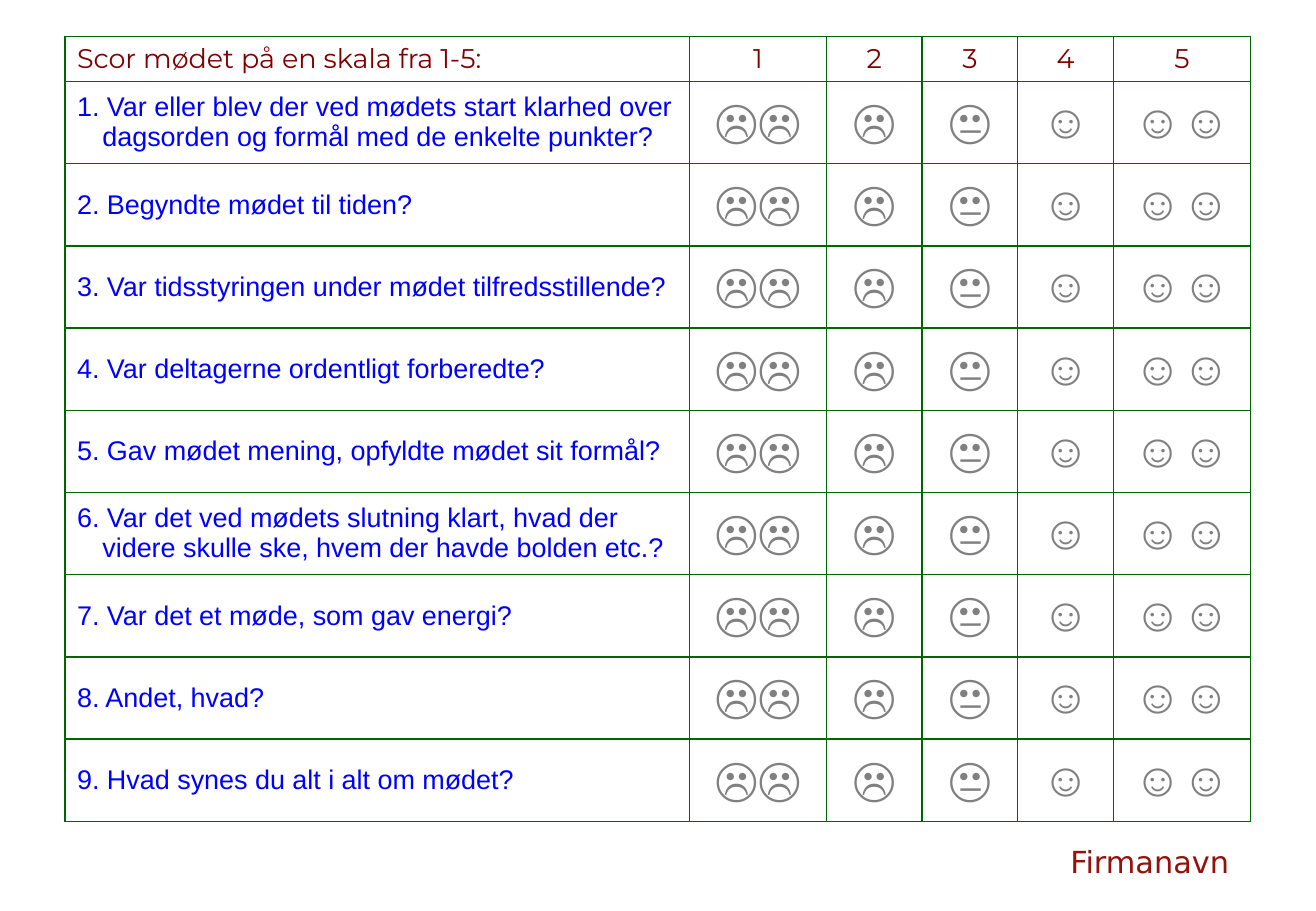
from lxml import etree
from pptx import Presentation
from pptx.dml.color import RGBColor
from pptx.enum.text import MSO_ANCHOR, PP_ALIGN
from pptx.oxml.ns import qn
from pptx.util import Pt

LEFT, MID = PP_ALIGN.LEFT, PP_ALIGN.CENTER
TOP, CENTRE = MSO_ANCHOR.TOP, MSO_ANCHOR.MIDDLE
HUES = {"head": "800000", "ask": "0000FF", "face": "808080",
        "line": "006600", "name": "93130C"}
WIDTHS = [370.2, 81.2, 56.7, 56.7, 56.7, 81.2]
HEAD = ["Scor mødet på en skala fra 1-5:", "1", "2", "3", "4", "5"]
FACES = ["☹☹", "☹", "😐", "☺", "☺☺"]
ASKS = [
    "Var eller blev der ved mødets start klarhed over dagsorden og formål med de enkelte punkter?",
    "Begyndte mødet til tiden?",
    "Var tidsstyringen under mødet tilfredsstillende?",
    "Var deltagerne ordentligt forberedte?",
    "Gav mødet mening, opfyldte mødet sit formål?",
    "Var det ved mødets slutning klart, hvad der videre skulle ske, hvem der havde bolden etc.?",
    "Var det et møde, som gav energi?",
    "Andet, hvad?",
    "Hvad synes du alt i alt om mødet?",
]


def write(frame, text, font="Arial", size=16, hue="ask", align=LEFT, hang=0):
    """Put one formatted paragraph in a text frame."""
    para = frame.paragraphs[0]
    para.alignment = align
    if hang:
        props = para._p.get_or_add_pPr()
        props.set("marL", str(Pt(hang)))
        props.set("indent", str(-Pt(hang)))
    run = para.add_run()
    run.text = text
    run.font.name = font
    run.font.size = Pt(size)
    run.font.color.rgb = RGBColor.from_string(HUES[hue])


def edge(cell):
    """Draw a thin line on all four sides of a cell."""
    props = cell._tc.get_or_add_tcPr()
    for at, side in enumerate(("lnL", "lnR", "lnT", "lnB")):
        line = etree.Element(qn("a:" + side), w=str(Pt(1)))
        fill = etree.SubElement(line, qn("a:solidFill"))
        etree.SubElement(fill, qn("a:srgbClr"), val=HUES["line"])
        props.insert(at, line)


def grid(slide, left, top, width, height, first=26.7):
    """Build the score table in its box."""
    rows = [HEAD] + [[f"{num}. {ask}"] + FACES for num, ask in enumerate(ASKS, 1)]
    table = slide.shapes.add_table(len(rows), len(HEAD), Pt(left), Pt(top),
                                   Pt(width), Pt(height)).table
    table.first_row = table.horz_banding = False
    for col, wide in zip(table.columns, WIDTHS):
        col.width = Pt(wide)
    for num, texts in enumerate(rows):
        table.rows[num].height = Pt((height - first) / len(ASKS) if num else first)
        for pos, text in enumerate(texts):
            cell = table.cell(num, pos)
            cell.fill.background()
            edge(cell)
            cell.vertical_anchor = CENTRE if num else TOP
            if num == 0:
                look = {"font": "Montserrat", "hue": "head"}
            elif pos:
                look = {"font": "Times New Roman", "size": 28, "hue": "face"}
            else:
                look = {}
            write(cell.text_frame, text, align=MID if pos else LEFT, hang=15, **look)


def sign(slide, left, top, width, height):
    """Place the sender's name in its box."""
    frame = slide.shapes.add_textbox(Pt(left), Pt(top), Pt(width), Pt(height)).text_frame
    frame.word_wrap = True
    frame.vertical_anchor = CENTRE
    write(frame, "Firmanavn", font="DejaVu Sans", size=18, hue="name", align=MID)


def main():
    """Build and save the slide."""
    deck = Presentation()
    deck.slide_width, deck.slide_height = Pt(780), Pt(540)
    slide = deck.slides.add_slide(deck.slide_layouts[6])
    sign(slide, 617, 496, 129, 28.8)
    grid(slide, 38.5, 21.6, sum(WIDTHS), 465.3)
    deck.save("out.pptx")


if __name__ == "__main__":
    main()
